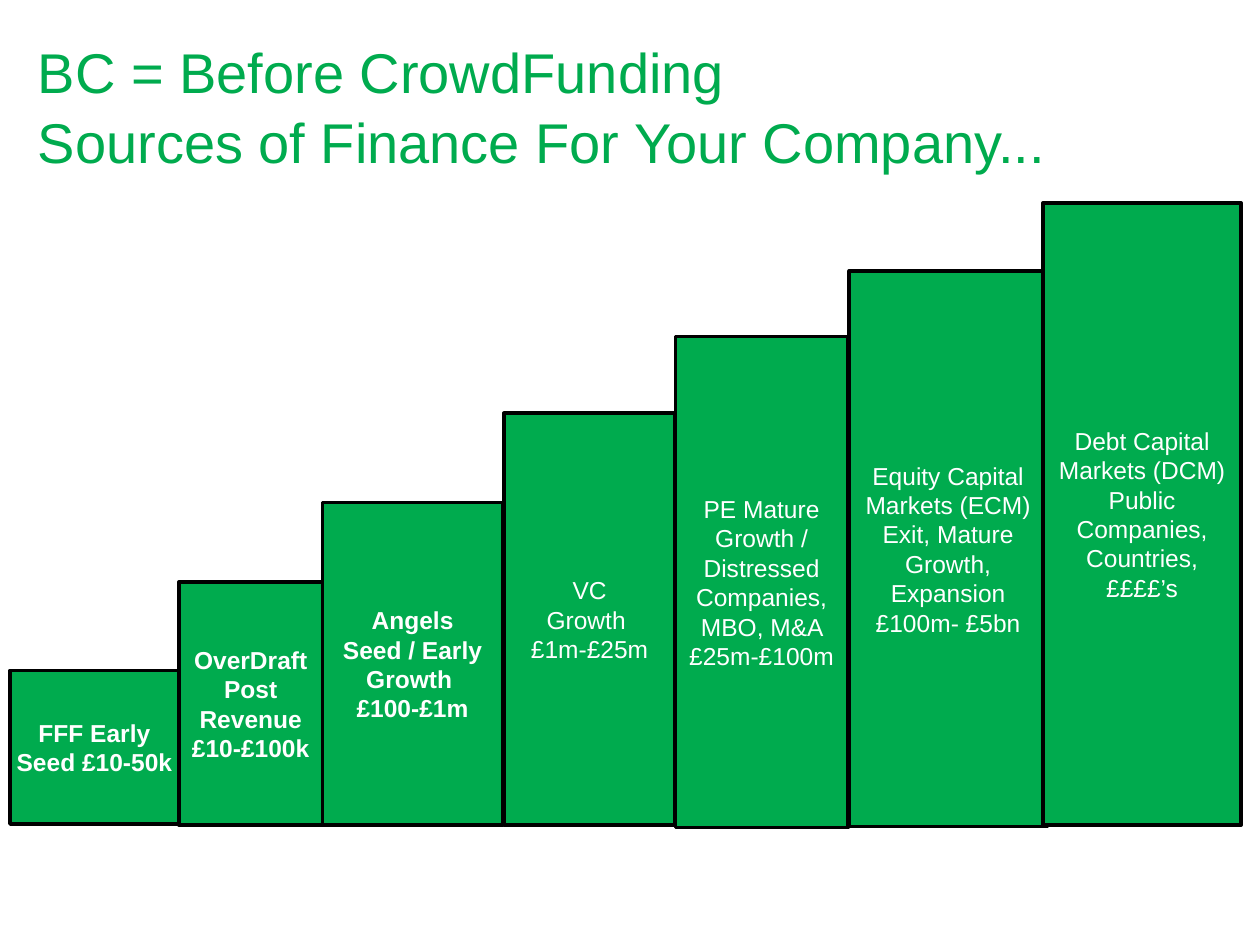
from pptx import Presentation
from pptx.dml.color import RGBColor
from pptx.enum.shapes import MSO_SHAPE
from pptx.enum.text import MSO_ANCHOR, PP_ALIGN
from pptx.util import Inches, Pt

GREEN = RGBColor(0x00, 0xAB, 0x4E)
BLACK = RGBColor(0x00, 0x00, 0x00)
WHITE = RGBColor(0xFF, 0xFF, 0xFF)
RECTANGLE = MSO_SHAPE.RECTANGLE
MIDDLE = MSO_ANCHOR.MIDDLE
LEFT, CENTER = PP_ALIGN.LEFT, PP_ALIGN.CENTER

TITLE = "BC = Before CrowdFunding\vSources of Finance For Your Company..."

# Each step: left, top, width, height, bold, paragraphs
STEPS = [
    (0.08, 5.32, 1.34, 1.22, True, ["FFF Early Seed £10-50k"]),
    (1.42, 4.62, 1.14, 1.93, True, ["OverDraft Post Revenue £10-£100k"]),
    (2.56, 3.99, 1.43, 2.56, True,
     ["Angels", "Seed / Early Growth ", "£100-£1m"]),
    (4.00, 3.28, 1.36, 3.27, False, ["VC", "Growth ", "£1m-£25m"]),
    (5.36, 2.67, 1.37, 3.90, False,
     ["PE Mature Growth / Distressed Companies, MBO, M&A £25m-£100m"]),
    (6.74, 2.15, 1.57, 4.41, False,
     ["Equity Capital Markets (ECM) Exit, Mature Growth, Expansion "
      "£100m- £5bn"]),
    (8.28, 1.61, 1.57, 4.94, False,
     ["Debt Capital Markets (DCM) Public Companies, Countries,", "££££’s"]),
]


def write_text(frame, paragraphs, *, size, color, font, align=LEFT,
               bold=False, spacing=None):
    """Fill a text frame with equally formatted paragraphs."""
    frame.word_wrap = True
    frame.vertical_anchor = MIDDLE
    for index, text in enumerate(paragraphs):
        para = frame.add_paragraph() if index else frame.paragraphs[0]
        para.alignment = align
        para.line_spacing = spacing
        para.text = text
        for span in para.runs:
            span.font.name = font
            span.font.size = Pt(size)
            span.font.bold = bold
            span.font.color.rgb = color


class SlideBuilder:
    """Holds the style and the current slide."""

    font = "Arial"
    title_size = 32
    step_size = 14
    outline = 2

    def __init__(self, slide):
        self.slide = slide

    def title(self, text, left, top, width, height):
        box = self.slide.shapes.title
        box.left, box.top = Inches(left), Inches(top)
        box.width, box.height = Inches(width), Inches(height)
        write_text(box.text_frame, [text], size=self.title_size,
                   color=GREEN, font=self.font, spacing=1.04)

    def step(self, left, top, width, height, bold, paragraphs):
        box = self.slide.shapes.add_shape(
            RECTANGLE, Inches(left), Inches(top), Inches(width), Inches(height))
        box.shadow.inherit = False
        box.fill.solid()
        box.fill.fore_color.rgb = GREEN
        box.line.color.rgb = BLACK
        box.line.width = Pt(self.outline)
        frame = box.text_frame
        frame.margin_left = frame.margin_right = 0
        frame.margin_top = frame.margin_bottom = 0
        write_text(frame, paragraphs, size=self.step_size, color=WHITE,
                   font=self.font, align=CENTER, bold=bold)


def main():
    deck = Presentation()
    deck.slide_width, deck.slide_height = Inches(10), Inches(7.5)
    title_only = deck.slide_layouts[5]
    builder = SlideBuilder(deck.slides.add_slide(title_only))

    # Heading
    builder.title(TITLE, 0.2, 0.02, 9, 1.62)

    # Staircase of finance sources
    for step in STEPS:
        builder.step(*step)

    deck.save("out.pptx")


if __name__ == "__main__":
    main()
